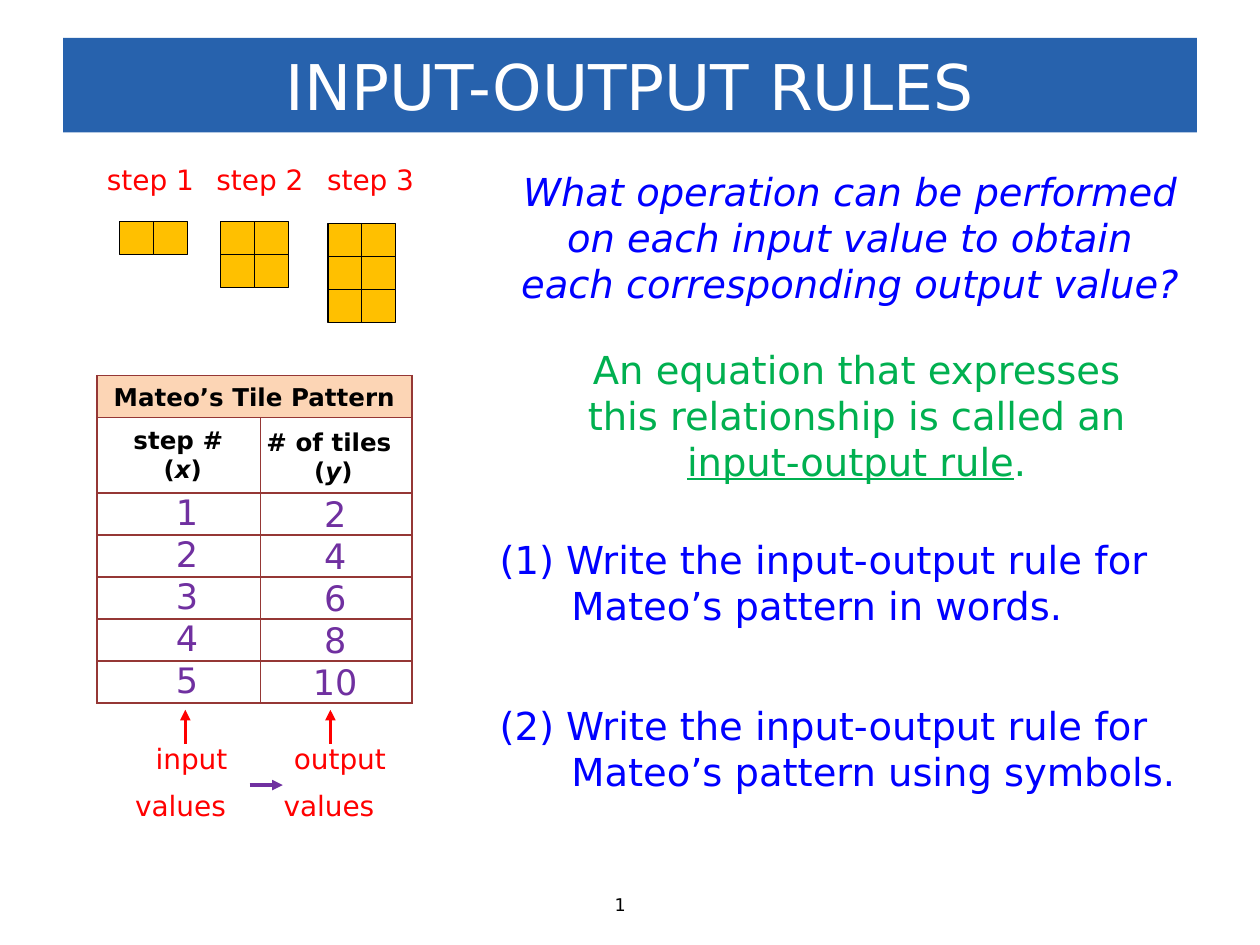
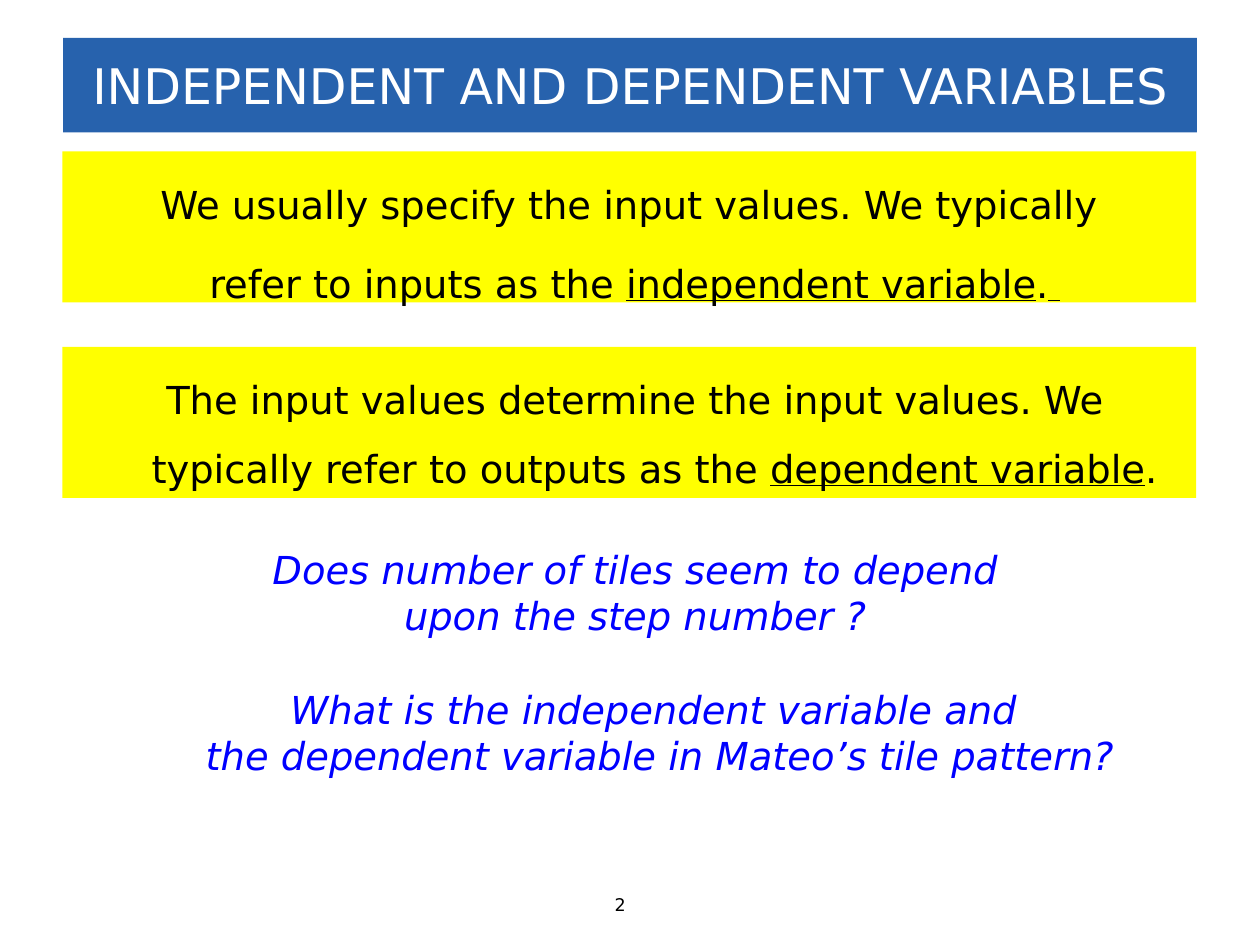
from collections import namedtuple
from dataclasses import dataclass
from lxml.etree import SubElement
from pptx import Presentation
from pptx.dml.color import RGBColor
from pptx.enum.shapes import MSO_CONNECTOR, MSO_SHAPE
from pptx.enum.text import MSO_ANCHOR, MSO_AUTO_SIZE, PP_ALIGN
from pptx.oxml import parse_xml
from pptx.oxml.ns import nsdecls, qn
from pptx.util import Pt

Box = namedtuple("Box", "left top width height")


@dataclass(frozen=True)
class Theme:
    """Colours, font and type sizes of the lesson."""
    font: str = "DejaVu Sans"
    band: str = "2762AD"
    white: str = "FFFFFF"
    black: str = "000000"
    blue: str = "0000FF"
    green: str = "00B050"
    red: str = "FF0000"
    purple: str = "7030A0"
    yellow: str = "FFFF00"
    tile: str = "FFC000"
    table_head: str = "FCD5B5"
    table_border: str = "953735"
    title: int = 36
    long_title: int = 28
    body: int = 22
    value: int = 20
    label: int = 16
    heading: int = 14
    footer: int = 10


THEME = Theme()


def color(code):
    """Turn a hexadecimal code into a colour."""
    return RGBColor.from_string(code)


def in_points(box):
    """Return the four sides of a box as lengths."""
    return [Pt(side) for side in box]


def style_font(font, size, code, marks=""):
    """Set the font; marks may hold b, i and u."""
    font.name = THEME.font
    font.size = Pt(size)
    font.color.rgb = color(code)
    font.bold = "b" in marks
    font.italic = "i" in marks
    font.underline = "u" in marks


def write(frame, paragraphs, size, code, marks="", align=PP_ALIGN.LEFT,
          anchor=MSO_ANCHOR.TOP, indent=(0, 0), before=0, spacing=1.0):
    """Fill a text frame with paragraphs made of text and (text, marks) runs."""
    frame.word_wrap = True
    frame.vertical_anchor = anchor
    for index, pieces in enumerate(paragraphs):
        paragraph = frame.add_paragraph() if index else frame.paragraphs[0]
        paragraph.alignment = align
        paragraph.line_spacing = spacing
        paragraph.space_before = Pt(before if index else 0)
        properties = paragraph._p.get_or_add_pPr()
        properties.set("marL", str(Pt(indent[0])))
        properties.set("indent", str(Pt(indent[1])))
        SubElement(properties, qn("a:buNone"))
        for piece in pieces:
            text, extra = (piece, "") if isinstance(piece, str) else piece
            run = paragraph.add_run()
            run.text = text
            style_font(run.font, size, code, marks + extra)


def add_text(slide, box, paragraphs, size, code, side_margin=7.2, **options):
    """Add a wrapping text box and return its text frame."""
    frame = slide.shapes.add_textbox(*in_points(box)).text_frame
    frame.margin_left = frame.margin_right = Pt(side_margin)
    write(frame, paragraphs, size, code, **options)
    return frame


def add_rectangle(slide, box, fill, line=None):
    """Add a flat rectangle with an optional outline."""
    shape = slide.shapes.add_shape(MSO_SHAPE.RECTANGLE, *in_points(box))
    shape.shadow.inherit = False
    shape.fill.solid()
    shape.fill.fore_color.rgb = color(fill)
    if line:
        shape.line.color.rgb = color(line)
        shape.line.width = Pt(0.75)
    else:
        shape.line.fill.background()
    return shape


def add_arrow(slide, start, end, code):
    """Add an arrow that points at its end."""
    points = [Pt(value) for value in (*start, *end)]
    connector = slide.shapes.add_connector(MSO_CONNECTOR.STRAIGHT, *points)
    connector.line.color.rgb = color(code)
    connector.line.width = Pt(2)
    SubElement(connector.line._get_or_add_ln(), qn("a:tailEnd"), type="triangle")
    SubElement(connector._element.spPr, qn("a:effectLst"))


def place(placeholder, box):
    """Move a placeholder to a box and return its unscaled text frame."""
    placeholder.left, placeholder.top, placeholder.width, placeholder.height = in_points(box)
    placeholder.text_frame.auto_size = MSO_AUTO_SIZE.NONE
    return placeholder.text_frame


def add_footer(slide, box):
    """Add the slide number."""
    frame = add_text(slide, box, [[]], THEME.footer, THEME.black)
    field = parse_xml(
        f'<a:fld {nsdecls("a")} id="{{B6F15528-21DE-4FAA-801E-634DDDAF4B2B}}" type="slidenum">'
        f'<a:rPr lang="en-US" sz="{THEME.footer * 100}"><a:solidFill><a:srgbClr val="{THEME.black}"/>'
        f'</a:solidFill><a:latin typeface="{THEME.font}"/></a:rPr><a:t>‹#›</a:t></a:fld>')
    frame.paragraphs[0]._p.append(field)


def start_slide(presentation, layout, title, size):
    """Add a slide with its title band and number."""
    slide = presentation.slides.add_slide(presentation.slide_layouts.get_by_name(layout))
    band = slide.shapes.title
    frame = place(band, Box(36, 21.6, 648, 54))
    band.fill.solid()
    band.fill.fore_color.rgb = color(THEME.band)
    write(frame, [[title]], size, THEME.white, align=PP_ALIGN.CENTER, anchor=MSO_ANCHOR.MIDDLE)
    add_footer(slide, Box(344.2, 507.6, 31.7, 19.4))
    return slide


def add_tile_steps(slide, box):
    """Draw the three steps of the tile pattern under their labels."""
    tile_width, tile_height, columns = 19.4, 18.9, 2
    offsets = [(0, 14.4, 37.4), (62.6, 72, 37.4), (125.8, 133.4, 38.3)]
    for step, (label_left, tiles_left, tiles_top) in enumerate(offsets, start=1):
        label = Box(box.left + label_left, box.top, 68, 26.6)
        add_text(slide, label, [[f"step {step}"]], THEME.label, THEME.red)
        for index in range(step * columns):
            row, column = divmod(index, columns)
            tile = Box(box.left + tiles_left + column * tile_width,
                       box.top + tiles_top + row * tile_height, tile_width, tile_height)
            add_rectangle(slide, tile, THEME.tile, THEME.black)


def format_cell(cell, fill=None):
    """Give a cell its fill, no margins and four borders."""
    cell.margin_left = cell.margin_right = cell.margin_top = cell.margin_bottom = 0
    if fill:
        cell.fill.solid()
        cell.fill.fore_color.rgb = color(fill)
    else:
        cell.fill.background()
    properties = cell._tc.get_or_add_tcPr()
    for index, side in enumerate("LRTB"):
        properties.insert(index, parse_xml(
            f'<a:ln{side} {nsdecls("a")} w="{Pt(1)}"><a:solidFill>'
            f'<a:srgbClr val="{THEME.table_border}"/></a:solidFill></a:ln{side}>'))


def add_pattern_grid(slide, box, value_rows):
    """Add the ruled table with its merged heading row."""
    table = slide.shapes.add_table(value_rows + 2, 2, *in_points(box)).table
    table.first_row = table.horz_banding = False
    for column, width in zip(table.columns, (93.6, 86.4)):
        column.width = Pt(width)
    for index, row in enumerate(table.rows):
        row.height = Pt(43.2 if index == 1 else 24)
        for cell in row.cells:
            format_cell(cell, None if index else THEME.table_head)
    table.cell(0, 0).merge(table.cell(0, 1))


def add_pattern_table(slide, box):
    """Add the table of the tile pattern and lay its entries over it."""
    steps = range(1, 6)
    add_pattern_grid(slide, box, len(steps))
    add_text(slide, Box(box.left, box.top, box.width, 24.2), [["Mateo’s Tile Pattern"]],
             THEME.heading, THEME.black, marks="b", align=PP_ALIGN.CENTER)
    columns = [("step # ", "x", Box(9.4, 24.5, 79.2, 41), 1, Box(38.9, 61.9, 25.2, 128.2)),
               ("# of tiles ", "y", Box(91.5, 25.9, 87.1, 41), 2, Box(117.4, 63.4, 37.6, 128.2))]
    for heading, variable, heading_box, factor, value_box in columns:
        entries = [
            (heading_box, [[heading], ["(", (variable, "i"), ")"]],
             THEME.heading, THEME.black, "b"),
            (value_box, [[str(factor * step)] for step in steps],
             THEME.value, THEME.purple, "")]
        for area, paragraphs, size, code, marks in entries:
            moved = Box(box.left + area.left, box.top + area.top, area.width, area.height)
            add_text(slide, moved, paragraphs, size, code, side_margin=0,
                     marks=marks, align=PP_ALIGN.CENTER)


def add_value_labels(slide, box):
    """Label the table columns as input and output values."""
    columns = [("input", 0.3, 36), ("output", 85.1, 118.9)]
    for word, left, arrow_left in columns:
        label = Box(box.left + left, box.top, 78.5, box.height)
        frame = add_text(slide, label, [[word], ["values"]], THEME.label, THEME.red,
                         side_margin=0, align=PP_ALIGN.CENTER, before=8)
        frame.paragraphs[1]._p.get_or_add_pPr().set("marR", str(Pt(12.6)))
        arrow = box.left + arrow_left
        add_arrow(slide, (arrow, box.top + 5), (arrow, box.top - 14.4), THEME.red)
    middle = box.top + 28.6
    add_arrow(slide, (box.left + 72.7, middle), (box.left + 91.7, middle), THEME.purple)


def build_rules_slide(presentation):
    """Build the slide on input-output rules."""
    slide = start_slide(presentation, "Two Content", "INPUT-OUTPUT RULES", THEME.title)
    add_tile_steps(slide, Box(54, 89.3, 194, 96))
    add_pattern_table(slide, Box(55.4, 214.6, 180, 187.2))
    add_value_labels(slide, Box(69.9, 420, 163.5, 56))
    add_text(slide, Box(288, 92.2, 395.3, 82.8),
             [["What operation can be performed on each input value to obtain "
               "each corresponding output value?"]],
             THEME.body, THEME.blue, marks="i", align=PP_ALIGN.CENTER)
    add_text(slide, Box(325, 194.2, 329, 90),
             [["An equation that expresses this relationship is called an ",
               ("input-output rule", "u"), "."]],
             THEME.body, THEME.green, align=PP_ALIGN.CENTER)
    tasks = [(1, "in words", 302.8), (2, "using symbols", 397.4)]
    for number, manner, top in tasks:
        frame = place(slide.placeholders[number], Box(278.3, top, 405.4, 68.4))
        write(frame, [[f"({number}) Write the input-output rule for Mateo’s pattern {manner}."]],
              THEME.body, THEME.blue, indent=(41, -41))


def add_definition(slide, box, paragraphs):
    """Add a highlighted definition."""
    shape = add_rectangle(slide, box, THEME.yellow)
    write(shape.text_frame, paragraphs, THEME.body, THEME.black, align=PP_ALIGN.CENTER,
          indent=(28.8, -22.3), before=6, spacing=1.5)


def add_question(slide, box, lines, indent):
    """Add a centred question, one paragraph for each line."""
    add_text(slide, box, [[line] for line in lines], THEME.body, THEME.blue, marks="i",
             align=PP_ALIGN.CENTER, indent=indent)


def build_variables_slide(presentation):
    """Build the slide on independent and dependent variables."""
    slide = start_slide(presentation, "Title Only",
                        "INDEPENDENT AND DEPENDENT VARIABLES", THEME.long_title)
    add_definition(slide, Box(35.6, 86.5, 648, 86.4), [
        ["We usually specify the input values. We typically "],
        ["refer to inputs as the ", ("independent variable", "u"), ".", (" ", "u")]])
    add_definition(slide, Box(35.6, 198.2, 648, 86.4), [
        ["The input values determine the input values. We typically refer to outputs as the ",
         ("dependent variable", "u"), "."]])
    add_question(slide, Box(139.7, 308.2, 440, 64.8),
                 ["Does number of tiles seem to depend ", "upon the step number ?"],
                 (28.8, -22.3))
    add_question(slide, Box(65.5, 388.4, 622.8, 64.8),
                 ["What is the independent variable and ",
                  "the dependent variable in Mateo’s tile pattern?"], (41, -41))


def main():
    """Build and save the presentation."""
    presentation = Presentation()
    presentation.slide_width, presentation.slide_height = Pt(720), Pt(540)
    build_rules_slide(presentation)
    build_variables_slide(presentation)
    presentation.save("out.pptx")


if __name__ == "__main__":
    main()
